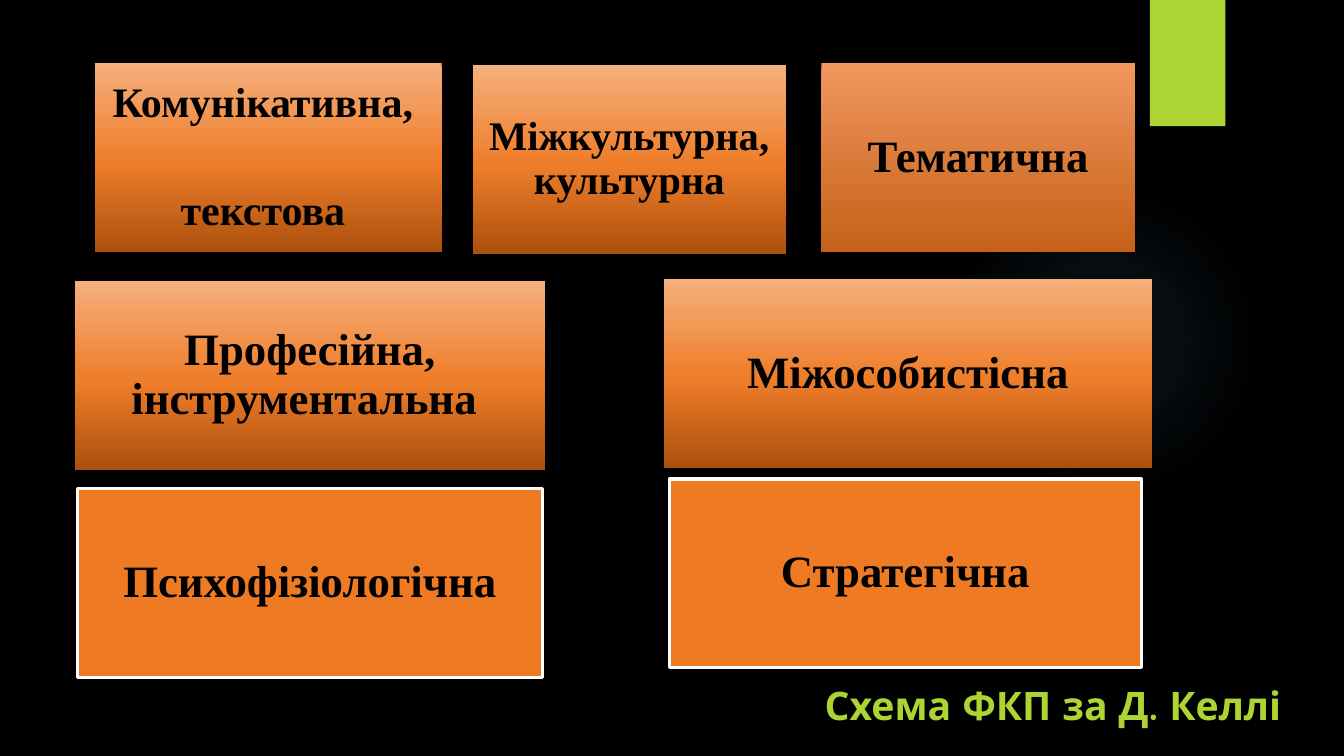
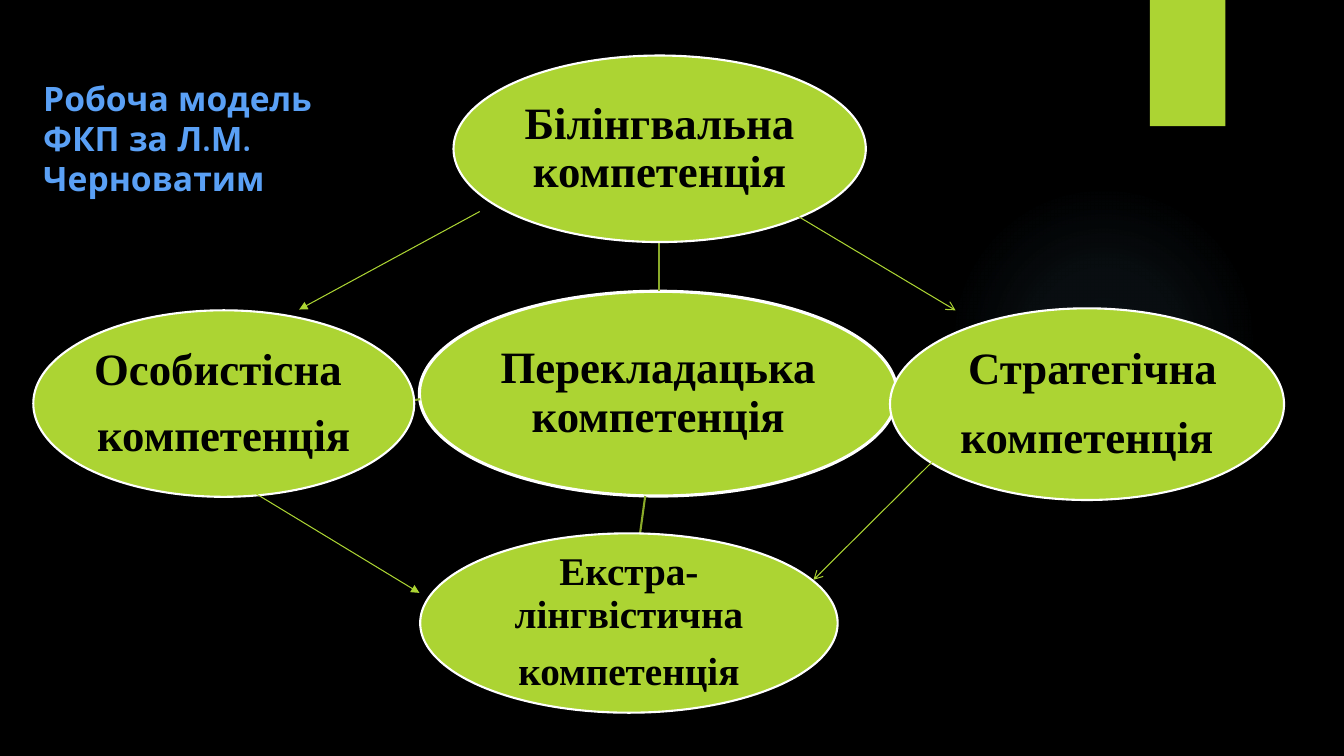
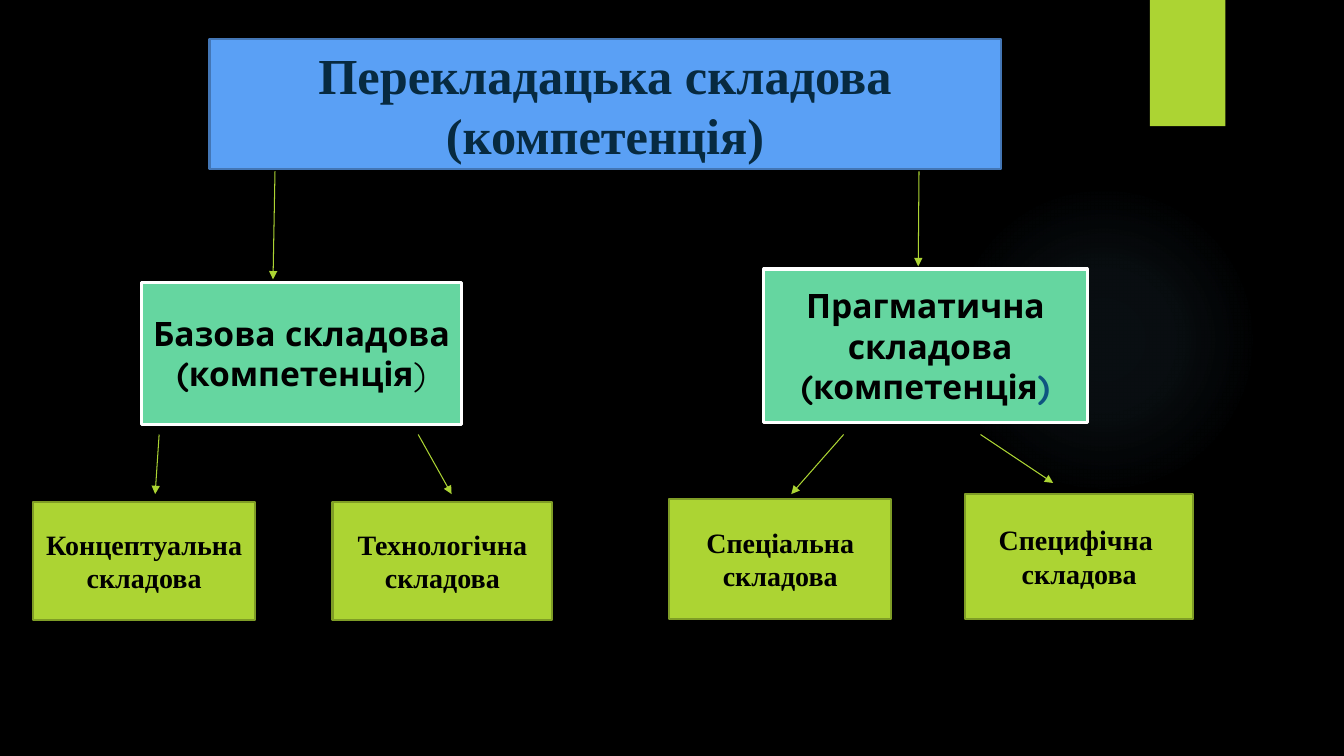
from lxml import etree
from pptx import Presentation
from pptx.dml.color import RGBColor
from pptx.enum.shapes import MSO_CONNECTOR, MSO_SHAPE
from pptx.enum.text import MSO_ANCHOR, PP_ALIGN
from pptx.oxml import parse_xml
from pptx.oxml.ns import nsdecls, qn
from pptx.util import Cm, Pt

RECT, OVAL = MSO_SHAPE.RECTANGLE, MSO_SHAPE.OVAL
STRAIGHT = MSO_CONNECTOR.STRAIGHT
LEFT, MID, RIGHT = PP_ALIGN.LEFT, PP_ALIGN.CENTER, PP_ALIGN.RIGHT
TOP, CENTER = MSO_ANCHOR.TOP, MSO_ANCHOR.MIDDLE

SERIF, SANS = "Times New Roman", "Quicksand"
HEX = {
    "black": "000000", "white": "FFFFFF", "lime": "ACD433",
    "olive": "8AAA29", "moss": "7F9D26", "orange": "EF7A24",
    "blue": "5AA0F5", "steel": "4376B5", "navy": "072A40",
    "mint": "65D6A0", "teal": "0E5580",
}
RGB = {name: RGBColor.from_string(code) for name, code in HEX.items()}

# Gradient stops: position, colour, opacity (all but the colour in percent)
DOWN = '<a:lin ang="5400000" scaled="0"/>'
ROUND = ('<a:path path="circle"><a:fillToRect l="50000" t="50000" '
         'r="50000" b="50000"/></a:path>')
FADES = {
    "glow": (ROUND, [(0, "7AC4F0", 7), (36, "7AC4F0", 6), (69, "7AC4F0", 0)]),
    "rust": (DOWN, [(0, "F5AF7C", 100), (52, "EF7E2B", 100),
                    (100, "AC500D", 100)]),
    "peach": (DOWN, [(0, "F2975F", 100), (100, "C56118", 100)]),
}


def box(page, kind, at, fill=None, edge=None, width=1.5, text="", size=32,
        font=SERIF, ink="black", align=MID, gap=0, lead=1.0, pad=(0.25, 0.13)):
    """Add a shape, or a text box if kind is None; gap parts its paragraphs."""
    place = [Cm(n) for n in at]
    if kind is None:
        shape = page.shapes.add_textbox(*place)
    else:
        shape = page.shapes.add_shape(kind, *place)
        shape.shadow.inherit = False
        if fill in FADES:
            way, stops = FADES[fill]
            marks = "".join(
                f'<a:gs pos="{pos * 1000}"><a:srgbClr val="{code}">'
                f'<a:alpha val="{part * 1000}"/></a:srgbClr></a:gs>'
                for pos, code, part in stops)
            shape.fill.background()
            props = shape.element.spPr
            props.replace(props.find(qn("a:noFill")), parse_xml(
                f'<a:gradFill {nsdecls("a")} rotWithShape="1">'
                f'<a:gsLst>{marks}</a:gsLst>{way}</a:gradFill>'))
        else:
            shape.fill.solid()
            shape.fill.fore_color.rgb = RGB[fill]
        if edge:
            shape.line.color.rgb = RGB[edge]
            shape.line.width = Pt(width)
        else:
            shape.line.fill.background()
    if text:
        frame = shape.text_frame
        frame.text = text
        frame.word_wrap = True
        frame.vertical_anchor = TOP if kind is None else CENTER
        frame.margin_left = frame.margin_right = Cm(pad[0])
        frame.margin_top = frame.margin_bottom = Cm(pad[1])
        for i, para in enumerate(frame.paragraphs):
            para.alignment = align
            para.line_spacing = lead
            if i and gap:
                para.space_before = Pt(gap)
            para.font.name = font
            para.font.size = Pt(size)
            para.font.bold = True
            para.font.color.rgb = RGB[ink]
    return shape


def link(page, ends, head=None, ink="lime", width=0.75):
    line = page.shapes.add_connector(STRAIGHT, *[Cm(n) for n in ends])
    line.line.color.rgb = RGB[ink]
    line.line.width = Pt(width)
    props = line.element.spPr
    if head:
        etree.SubElement(props.find(qn("a:ln")), qn("a:tailEnd"), type=head)
    etree.SubElement(props, qn("a:effectLst"))


deck = Presentation()
deck.slide_width, deck.slide_height = Cm(33.87), Cm(19.05)

# Shared look, kept on the blank layout
blank = deck.slide_layouts[6]
for holder in list(blank.placeholders):
    blank.shapes.element.remove(holder.element)
blank.background.fill.solid()
blank.background.fill.fore_color.rgb = RGB["black"]
first, second, third = [deck.slides.add_slide(blank) for _ in range(3)]
for kind, at, fill in [(OVAL, (23.9, 4.65, 7.82, 7.82), "glow"),
                       (RECT, (28.98, 0, 1.9, 3.18), "lime")]:
    blank.shapes.element.append(box(first, kind, at, fill).element)

# Slide 1: scheme of seven competences
for left, top, wide, fill, edge, size, gap, text in [
    (2.39, 1.6, 8.74, "rust", None, 30, 44.5, "Комунікативна, \nтекстова "),
    (11.91, 1.65, 7.9, "rust", None, 29, 0, "Міжкультурна, культурна"),
    (20.7, 1.6, 7.9, "peach", None, 32, 0, "Тематична"),
    (1.88, 7.09, 11.86, "rust", None, 32, 0, "Професійна, інструментальна "),
    (16.74, 7.04, 12.29, "rust", None, 32, 0, "Міжособистісна"),
    (1.96, 12.32, 11.71, "orange", "white", 32, 0, "Психофізіологічна"),
    (16.87, 12.07, 11.89, "orange", "white", 32, 0, "Стратегічна"),
]:
    box(first, RECT, (left, top, wide, 4.75), fill, edge, 2.25, text, size,
        gap=gap, lead=0.9, pad=(0.3, 0.3))
box(first, None, (19.56, 17.04, 12.98, 1.45), text="Схема ФКП за Д. Келлі",
    size=28, font=SANS, ink="lime", align=RIGHT)

# Slide 2: hub with four competences around it
box(second, OVAL, (10.57, 7.34, 12.04, 5.16), "lime", "white", 2.25,
    "Перекладацька компетенція", lead=0.9, pad=(0.05, 0.05))
for ends in [(16.61, 7.34, 16.61, 6.12), (22.61, 10.06, 22.43, 10.06),
             (16.26, 12.5, 16.13, 13.44), (10.59, 10.06, 10.44, 10.08)]:
    link(second, ends, ink="olive", width=1.5)
for at, size, gap, text in [
    ((11.43, 1.4, 10.39, 4.7), 32, 0, "Білінгвальна компетенція"),
    ((22.43, 7.77, 9.93, 4.83), 32, 14.5, " Стратегічна\nкомпетенція"),
    ((10.59, 13.44, 10.52, 4.52), 28, 11, "Екстра-лінгвістична\nкомпетенція"),
    ((0.84, 7.82, 9.6, 4.7), 32, 12.5, "Особистісна \nкомпетенція"),
]:
    box(second, OVAL, at, "lime", "white", 1.5, text, size, gap=gap, lead=0.9,
        pad=(0.05, 0.05))
for ends, head in [
    ((23.5, 11.63, 20.5, 14.61), "arrow"),
    ((19.91, 5.33, 24.08, 7.82), "arrow"),
    ((12.09, 5.33, 7.54, 7.8), "triangle"),
    ((5.74, 12.01, 10.57, 14.94), "triangle"),
]:
    link(second, ends, head)
box(second, None, (0.84, 1.83, 9.42, 2.31), size=24, font=SANS, ink="blue",
    align=LEFT, text="Робоча модель ФКП за Л.М. Черноватим")

# Slide 3: tree of components
box(third, RECT, (5.28, 0.99, 19.94, 3.28), "blue", "steel", size=36,
    ink="navy", text="Перекладацька складова\n(компетенція)")
for at, text in [
    ((3.56, 7.11, 8.08, 3.58), "Базова складова\n(компетенція"),
    ((19.25, 6.78, 8.15, 3.86), "Прагматична\n складова\n(компетенція"),
]:
    branch = box(third, RECT, at, "mint", "white", 2.25, text, 24, SANS)
    close = branch.text_frame.paragraphs[-1].add_run()
    close.text = ")"
    if text.startswith("Базова"):
        close.font.bold = False
    else:
        close.font.color.rgb = RGB["teal"]
for at, text in [
    ((0.84, 12.65, 5.59, 2.97), "Концептуальна складова"),
    ((8.38, 12.65, 5.54, 2.97), "Технологічна\nскладова"),
    ((16.87, 12.57, 5.59, 3.02), "Спеціальна\nскладова"),
    ((24.33, 12.45, 5.74, 3.15), "Специфічна \nскладова"),
]:
    box(third, RECT, at, "lime", "moss", text=text, size=20)
for ends in [
    (6.93, 4.32, 6.88, 7.04), (23.16, 4.32, 23.14, 6.71),
    (4.01, 10.95, 3.91, 12.45), (10.54, 10.95, 11.38, 12.45),
    (21.26, 10.95, 19.94, 12.45), (24.71, 10.95, 26.54, 12.17),
]:
    link(third, ends, "triangle")

deck.save("out.pptx")
